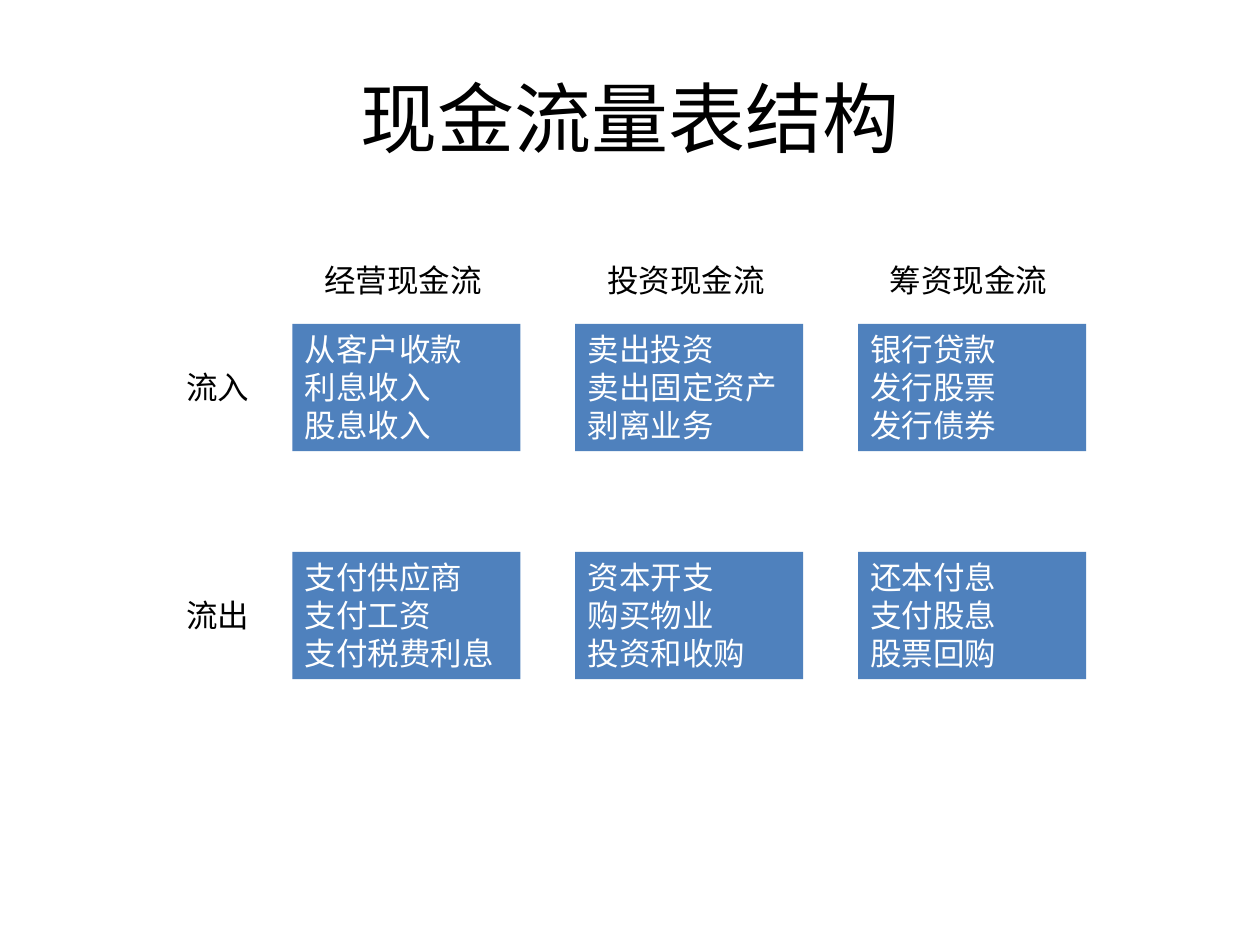
from dataclasses import dataclass

from pptx import Presentation
from pptx.dml.color import RGBColor as Rgb
from pptx.enum.shapes import MSO_SHAPE as Shape
from pptx.enum.text import MSO_ANCHOR as Anchor, PP_ALIGN as Align
from pptx.util import Inches, Pt

COLORS = {"box": "4F81BD", "light": "FFFFFF", "dark": "000000"}
FONT = "Calibri"
LEFT, STEP, WIDE, HIGH = 2.32, 2.245, 1.81, 1.01
HEAD_TOP, HEAD_WIDE = 2.02, 1.5
SIDE_LEFT, SIDE_WIDE, LABEL_HIGH = 1.38, 0.79, 0.4


@dataclass
class Row:
    label: str
    top: float
    cells: list[list[str]]


HEADS = ["经营现金流", "投资现金流", "筹资现金流"]
ROWS = [
    Row("流入", 2.57, [
        ["从客户收款", "利息收入", "股息收入"],
        ["卖出投资", "卖出固定资产", "剥离业务"],
        ["银行贷款", "发行股票", "发行债券"],
    ]),
    Row("流出", 4.38, [
        ["支付供应商", "支付工资", "支付税费利息"],
        ["资本开支", "购买物业", "投资和收购"],
        ["还本付息", "支付股息", "股票回购"],
    ]),
]


def write(shape, lines: list[str], *, size: float = 18, color: str = "dark",
          align=Align.LEFT, anchor=Anchor.TOP) -> None:
    frame = shape.text_frame
    frame.word_wrap = True
    frame.vertical_anchor = anchor
    frame.text = "\n".join(lines)
    for para in frame.paragraphs:
        para.alignment = align
        para.font.name = FONT
        para.font.size = Pt(size)
        para.font.color.rgb = Rgb.from_string(COLORS[color])


def add_label(slide, text: str, left: float, top: float, wide: float,
              high: float = LABEL_HIGH, **style) -> None:
    box = slide.shapes.add_textbox(
        Inches(left), Inches(top), Inches(wide), Inches(high))
    write(box, [text], **style)


def add_cell(slide, lines: list[str], left: float, top: float) -> None:
    box = slide.shapes.add_shape(
        Shape.RECTANGLE, Inches(left), Inches(top), Inches(WIDE), Inches(HIGH))
    box.shadow.inherit = False
    box.fill.solid()
    box.fill.fore_color.rgb = Rgb.from_string(COLORS["box"])
    box.line.fill.background()
    write(box, lines, color="light")


def main() -> None:
    deck = Presentation()
    deck.slide_width, deck.slide_height = Inches(10), Inches(7.5)
    slide = deck.slides.add_slide(deck.slide_layouts[6])

    add_label(slide, "现金流量表结构", 0.5, 0.3, 9, 1.25,
              size=44, align=Align.CENTER, anchor=Anchor.MIDDLE)
    lefts = [LEFT + col * STEP for col in range(len(HEADS))]
    for row in ROWS:
        for left, lines in zip(lefts, row.cells):
            add_cell(slide, lines, left, row.top)
    for left, head in zip(lefts, HEADS):
        add_label(slide, head, left + (WIDE - HEAD_WIDE) / 2, HEAD_TOP, HEAD_WIDE)
    for row in ROWS:
        add_label(slide, row.label, SIDE_LEFT,
                  row.top + (HIGH - LABEL_HIGH) / 2, SIDE_WIDE)

    deck.save("out.pptx")


if __name__ == "__main__":
    main()
